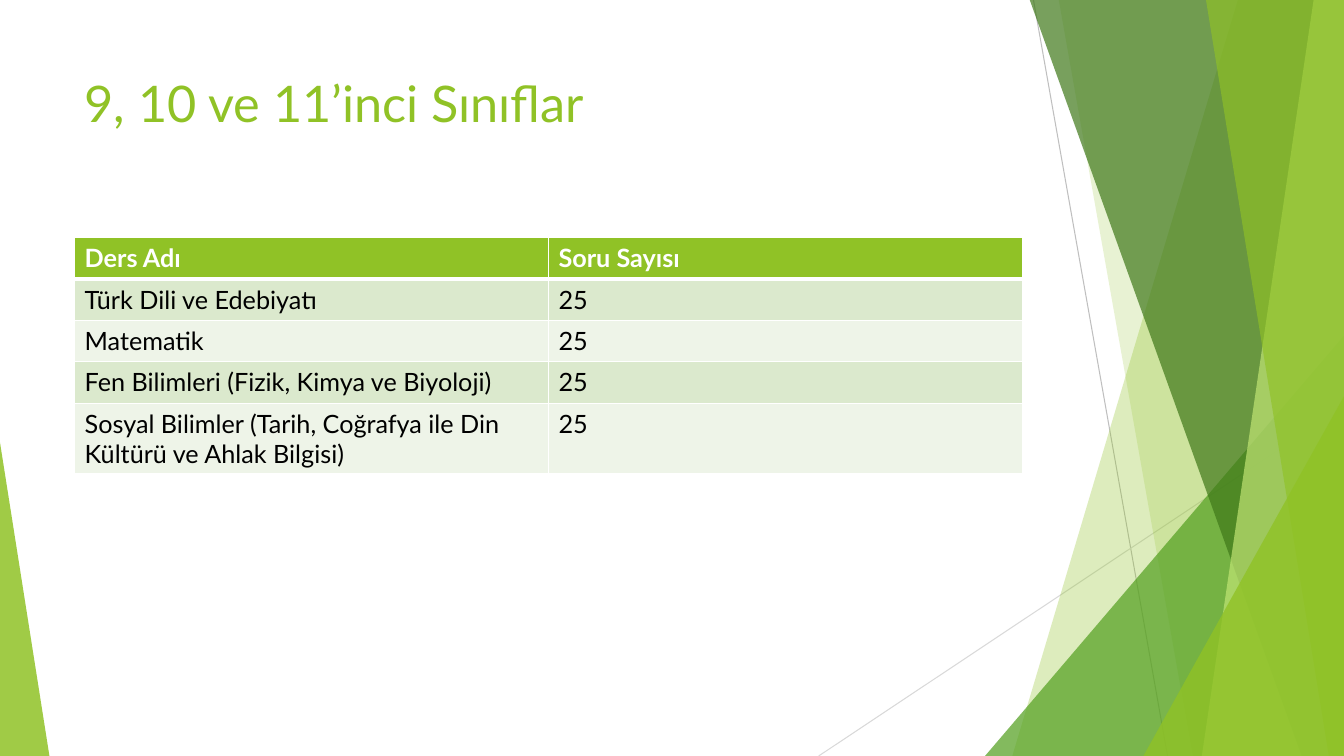
from lxml import etree
from pptx import Presentation
from pptx.dml.color import RGBColor
from pptx.enum import shapes, text
from pptx.oxml import ns, parse_xml
from pptx.util import Inches, Pt

WIDTH, HEIGHT = 13.33, 7.5
LEFT, CONTENT_WIDTH = 0.74, 9.4
LIME, WHITE, BLACK = "90C226", "FFFFFF", "000000"


def paint(fill, colour, opacity=100):
    fill.solid()
    fill.fore_color.rgb = RGBColor.from_string(colour)
    if opacity < 100:
        srgb = fill._xPr.find(".//" + ns.qn("a:srgbClr"))
        etree.SubElement(srgb, ns.qn("a:alpha"), val=str(opacity * 1000))


def write(frame, words, size, colour, bold=False):
    frame.word_wrap = True
    frame.vertical_anchor = text.MSO_ANCHOR.TOP
    run = frame.paragraphs[0].add_run()
    run.text = words
    for name, value in {"name": "Lato", "size": Pt(size), "bold": bold}.items():
        setattr(run.font, name, value)
    paint(run.font.fill, colour)


deck = Presentation()
deck.slide_width, deck.slide_height = Inches(WIDTH), Inches(HEIGHT)
slide = deck.slides.add_slide(deck.slide_layouts[6])

# Thin lines behind the shards: start, end, colour
for start, end, colour in [
    ((10.25, 0), (11.58, HEIGHT), "BFBFBF"),
    ((WIDTH, 4.03), (8.12, HEIGHT), "D9D9D9"),
]:
    ray = slide.shapes.add_connector(
        shapes.MSO_CONNECTOR.STRAIGHT, *map(Inches, start + end))
    ray.line.width = Pt(0.75)
    paint(ray.line.fill, colour)
    etree.SubElement(ray._element.spPr, ns.qn("a:effectLst"))

# Shards from back to front. A band gives its top and bottom x and reaches the
# right edge; a triangle gives left, top, width and the place of its apex.
for outline, colour, opacity in [
    ((12.28, 10.04), LIME, 30),
    ((10.5, 11.83), LIME, 20),
    ((9.77, 3.33, 3.56, 1), "54A021", 72),
    ((10.21, 12.91), "3F7819", 70),
    ((13.03, 11.92), "C0E474", 70),
    ((11.96, 13.18), LIME, 65),
    ((11.34, 3.93, 1.99, 1), LIME, 80),
    ((0, 4.39, 0.49, 0), LIME, 85),
]:
    if len(outline) == 2:
        top_x, bottom_x = map(Inches, outline)
        top, right, bottom = Inches(-0.01), Inches(WIDTH), Inches(HEIGHT)
        builder = slide.shapes.build_freeform(top_x, top)
        builder.add_line_segments([(right, top), (right, bottom), (bottom_x, bottom)])
        shard = builder.convert_to_shape()
    else:
        x, y, width, apex = outline
        shard = slide.shapes.add_shape(
            shapes.MSO_SHAPE.ISOSCELES_TRIANGLE,
            *map(Inches, (x, y, width, HEIGHT - y)))
        shard.adjustments[0] = apex
    shard.shadow.inherit = False
    shard.line.fill.background()
    paint(shard.fill, colour, opacity)

title = slide.shapes.add_textbox(*map(Inches, (LEFT, 0.67, CONTENT_WIDTH, 1.44)))
write(title.text_frame, "9, 10 ve 11’inci Sınıflar", 36, LIME)

lessons = [
    ("Ders Adı", "Soru Sayısı"),
    ("Türk Dili ve Edebiyatı", "25"),
    ("Matematik", "25"),
    ("Fen Bilimleri (Fizik, Kimya ve Biyoloji)", "25"),
    ("Sosyal Bilimler (Tarih, Coğrafya ile Din Kültürü ve Ahlak Bilgisi)", "25"),
]
row_heights = [0.41] * 4 + [0.69]
table = slide.shapes.add_table(
    len(lessons), 2,
    *map(Inches, (LEFT, 2.36, CONTENT_WIDTH, sum(row_heights)))).table
for r, lesson in enumerate(lessons):
    table.rows[r].height = Inches(row_heights[r])
    header = r == 0
    band = LIME if header else ("EEF4E8", "DBE9CD")[r % 2]
    borders = {"L": 1, "R": 1, "T": 3 if r == 1 else 1, "B": 3 if header else 1}
    for c, words in enumerate(lesson):
        cell = table.cell(r, c)
        write(cell.text_frame, words, 18, WHITE if header else BLACK, header)
        paint(cell.fill, band)
        for place, (side, points) in enumerate(borders.items()):
            cell._tc.tcPr.insert(place, parse_xml(
                f'<a:ln{side} {ns.nsdecls("a")} w="{Pt(points)}"><a:solidFill>'
                f'<a:srgbClr val="{WHITE}"/></a:solidFill></a:ln{side}>'))

deck.save("out.pptx")
